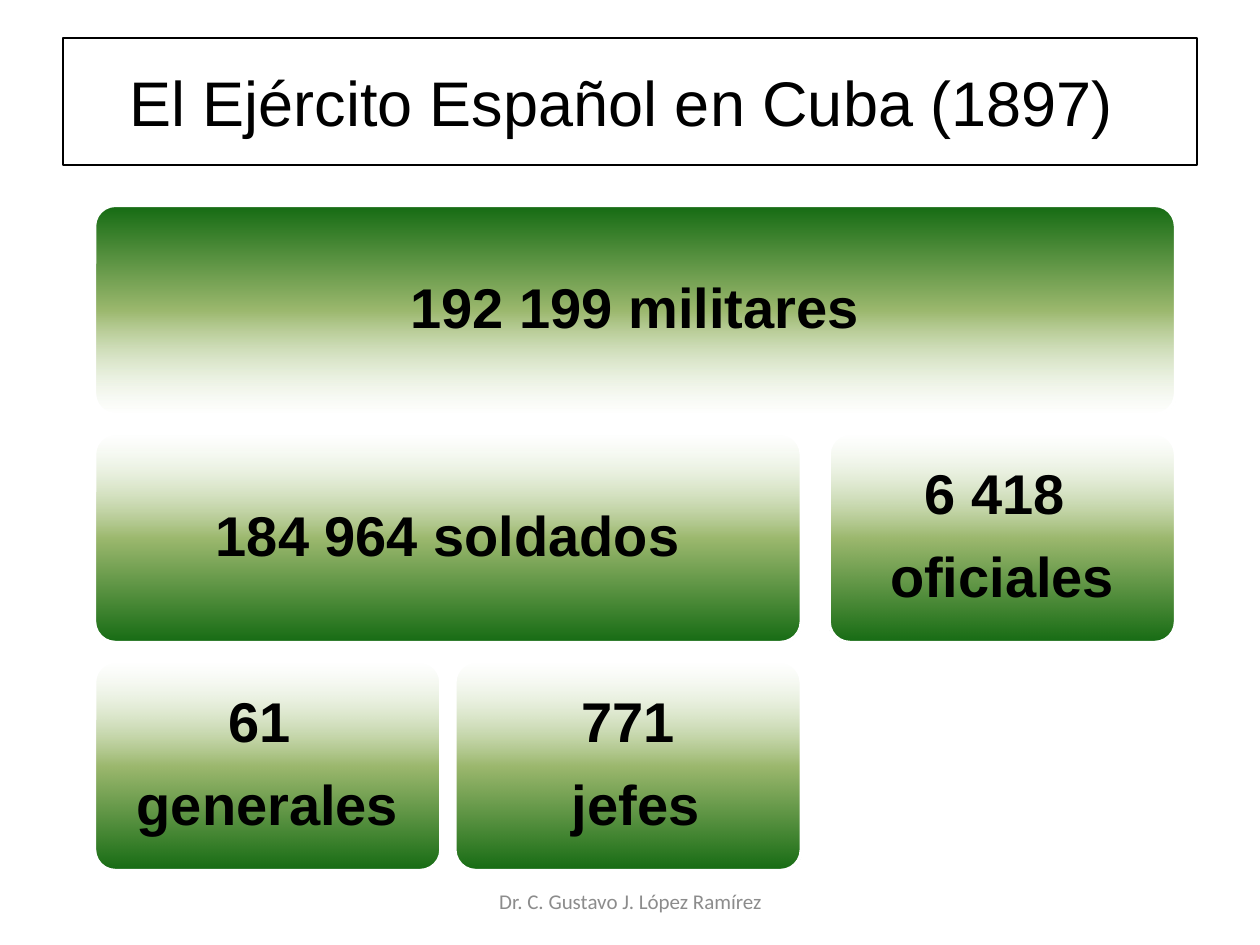
import dataclasses
import pptx
import pptx.util
import pptx.dml.color
import pptx.enum.shapes
import pptx.enum.text
import pptx.oxml
import pptx.oxml.ns

SCALE = 9144


@dataclasses.dataclass(frozen=True)
class Theme:
    head: str = "Arial"
    foot: str = "Calibri"
    ink: str = "000000"
    gray: str = "8C8C8C"
    edge: str = "FFFFFF"
    pale: str = "DDEBCF"
    mid: str = "9CB86E"
    deep: str = "156B13"
    title: int = 36
    body: int = 32
    small: int = 12


THEME = Theme()


def px(num):
    return pptx.util.Emu(num * SCALE)


def color(code):
    return pptx.dml.color.RGBColor.from_string(code)


def place(shape, box):
    shape.left, shape.top, shape.width, shape.height = map(px, box)


def write(shape, lines, face, size, ink, bold=False):
    frame = shape.text_frame
    frame.word_wrap = True
    frame.vertical_anchor = pptx.enum.text.MSO_ANCHOR.MIDDLE
    frame.text = "\n".join(lines)
    for para in frame.paragraphs:
        para.alignment = pptx.enum.text.PP_ALIGN.CENTER
        para.font.name = face
        para.font.size = pptx.util.Pt(size)
        para.font.bold = bold
        para.font.color.rgb = color(ink)
    return frame


def shade(shape, angle):
    xml = (
        f'<a:gradFill {pptx.oxml.ns.nsdecls("a")} rotWithShape="1"><a:gsLst>'
        f'<a:gs pos="0"><a:srgbClr val="{THEME.pale}"><a:alpha val="0"/></a:srgbClr></a:gs>'
        f'<a:gs pos="50000"><a:srgbClr val="{THEME.mid}"/></a:gs>'
        f'<a:gs pos="100000"><a:srgbClr val="{THEME.deep}"/></a:gs>'
        f'</a:gsLst><a:lin ang="{angle * 60000}" scaled="0"/></a:gradFill>'
    )
    shape.fill.background()
    old = shape._element.spPr.find(pptx.oxml.ns.qn("a:noFill"))
    old.getparent().replace(old, pptx.oxml.parse_xml(xml))


def add_title(slide, box, text):
    title = slide.shapes.title
    place(title, box)
    title.line.color.rgb = color(THEME.ink)
    title.line.width = pptx.util.Pt(1)
    write(title, [text], THEME.head, THEME.title, THEME.ink)


def add_card(slide, box, lines, angle):
    kind = pptx.enum.shapes.MSO_SHAPE.ROUNDED_RECTANGLE
    card = slide.shapes.add_shape(kind, *map(px, box))
    card.adjustments[0] = 0.1
    card.shadow.inherit = False
    shade(card, angle)
    card.line.color.rgb = color(THEME.edge)
    card.line.width = pptx.util.Pt(2)
    frame = write(card, lines, THEME.head, THEME.body, THEME.ink, True)
    frame.margin_left = frame.margin_right = px(13)
    frame.margin_top = frame.margin_bottom = px(13)
    for para in frame.paragraphs:
        para.line_spacing = 0.9
        para.space_after = pptx.util.Pt(13)


def add_tree(slide, box):
    left, top, width, height = box
    near, far, gap = 11, 22, 15
    unit = (width - near - far) // 3
    tall = (height - 2 * gap) // 3
    pair = 2 * unit + near
    cards = [
        (0, 0, width, ["192 199 militares"], 270),
        (0, 1, pair, ["184 964 soldados"], 90),
        (0, 2, unit, ["61 ", "generales"], 90),
        (unit + near, 2, unit, ["771", " jefes"], 90),
        (pair + far, 1, unit, ["6 418 ", "oficiales"], 90),
    ]
    for shift, row, wide, lines, angle in cards:
        spot = (left + shift, top + row * (tall + gap), wide, tall)
        add_card(slide, spot, lines, angle)


def add_foot(slide, box, text):
    foot = slide.shapes.add_textbox(*map(px, box))
    write(foot, [text], THEME.foot, THEME.small, THEME.gray)


def main():
    deck = pptx.Presentation()
    deck.slide_width, deck.slide_height = px(1000), px(750)
    slide = deck.slides.add_slide(deck.slide_layouts[5])
    add_title(slide, (50, 30, 900, 101), "El Ejército Español en Cuba (1897) ")
    add_foot(slide, (342, 695, 317, 40), "Dr. C. Gustavo J. López Ramírez")
    add_tree(slide, (75, 163, 858, 528))
    deck.save("out.pptx")


if __name__ == "__main__":
    main()
